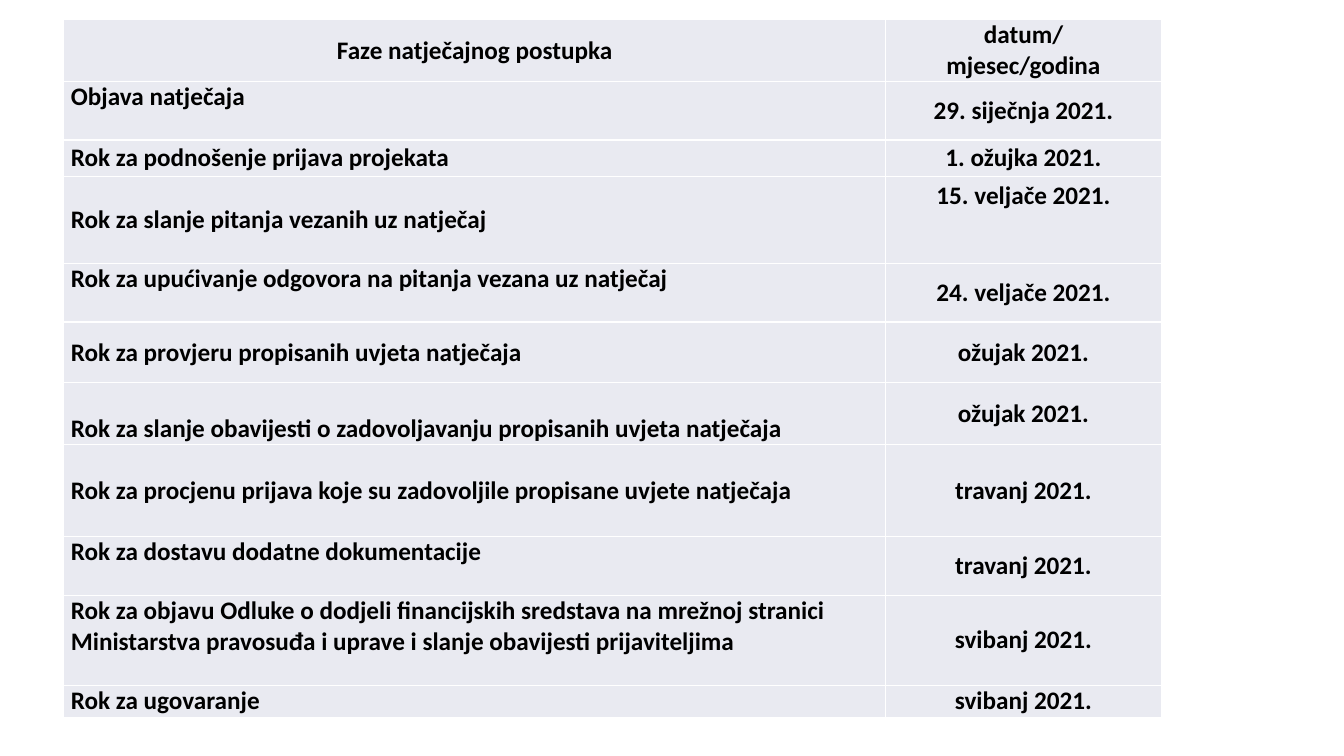
from typing import NamedTuple

from lxml import etree
from pptx import Presentation
from pptx.dml import color
from pptx.enum import text
from pptx.oxml import ns
from pptx.util import Pt

TOP = text.MSO_ANCHOR.TOP
MIDDLE = text.MSO_ANCHOR.MIDDLE
BOTTOM = text.MSO_ANCHOR.BOTTOM
LEFT = text.PP_ALIGN.LEFT
CENTER = text.PP_ALIGN.CENTER
COLUMN_WIDTHS = (587, 197)


class Phase(NamedTuple):
    title: str
    date: str
    height: float
    title_anchor: text.MSO_ANCHOR = MIDDLE
    date_anchor: text.MSO_ANCHOR = MIDDLE
    date_offset: float = 0
    title_align: text.PP_ALIGN = LEFT


PHASES = [
    Phase("Faze natječajnog postupka", "datum/\nmjesec/godina", 44, title_align=CENTER),
    Phase("Objava natječaja", "29. siječnja 2021.", 42, TOP),
    Phase("Rok za podnošenje prijava projekata", "1. ožujka 2021.", 26),
    Phase("Rok za slanje pitanja vezanih uz natječaj", "15. veljače 2021.", 62,
          date_anchor=TOP, date_offset=3),
    Phase("Rok za upućivanje odgovora na pitanja vezana uz natječaj",
          "24. veljače 2021.", 42, TOP),
    Phase("Rok za provjeru propisanih uvjeta natječaja", "ožujak 2021.", 43.5),
    Phase("Rok za slanje obavijesti o zadovoljavanju propisanih uvjeta natječaja",
          "ožujak 2021.", 44, BOTTOM),
    Phase("Rok za procjenu prijava koje su zadovoljile propisane uvjete natječaja",
          "travanj 2021.", 66),
    Phase("Rok za dostavu dodatne dokumentacije", "travanj 2021.", 42, TOP),
    Phase("Rok za objavu Odluke o dodjeli financijskih sredstava na mrežnoj stranici "
          "Ministarstva pravosuđa i uprave i slanje obavijesti prijaviteljima",
          "svibanj 2021.", 64, TOP),
    Phase("Rok za ugovaranje", "svibanj 2021.", 23),
]


def rgb(value: str) -> color.RGBColor:
    return color.RGBColor.from_string(value)


def add_borders(cell, value: str, width: float) -> None:
    properties = cell._tc.get_or_add_tcPr()
    for position, side in enumerate(("lnL", "lnR", "lnT", "lnB")):
        line = etree.Element(ns.qn(f"a:{side}"), w=str(Pt(width)))
        fill = etree.SubElement(line, ns.qn("a:solidFill"))
        etree.SubElement(fill, ns.qn("a:srgbClr"), val=value)
        properties.insert(position, line)


def fill_cell(cell, content: str, align: text.PP_ALIGN,
              anchor: text.MSO_ANCHOR, offset: float = 0) -> None:
    cell.text = content
    cell.vertical_anchor = anchor
    cell.margin_left = cell.margin_right = Pt(5)
    cell.margin_top, cell.margin_bottom = Pt(offset), Pt(0)
    cell.fill.solid()
    cell.fill.fore_color.rgb = rgb("E9EAF1")
    add_borders(cell, "FFFFFF", 1)
    for paragraph in cell.text_frame.paragraphs:
        paragraph.alignment = align
        paragraph.font.name = "Calibri"
        paragraph.font.size = Pt(18)
        paragraph.font.bold = True
        paragraph.font.color.rgb = rgb("000000")


def add_schedule(slide) -> None:
    schedule = slide.shapes.add_table(
        len(PHASES), len(COLUMN_WIDTHS), Pt(45.6), Pt(14),
        Pt(sum(COLUMN_WIDTHS)), Pt(sum(phase.height for phase in PHASES))).table
    for column, width in zip(schedule.columns, COLUMN_WIDTHS):
        column.width = Pt(width)
    for row, phase in zip(schedule.rows, PHASES):
        row.height = Pt(phase.height)
        title, date = row.cells
        fill_cell(title, phase.title, phase.title_align, phase.title_anchor)
        fill_cell(date, phase.date, CENTER, phase.date_anchor, phase.date_offset)


def main() -> None:
    deck = Presentation()
    deck.slide_width, deck.slide_height = Pt(960), Pt(540)
    add_schedule(deck.slides.add_slide(deck.slide_layouts[6]))
    deck.save("out.pptx")


if __name__ == "__main__":
    main()
